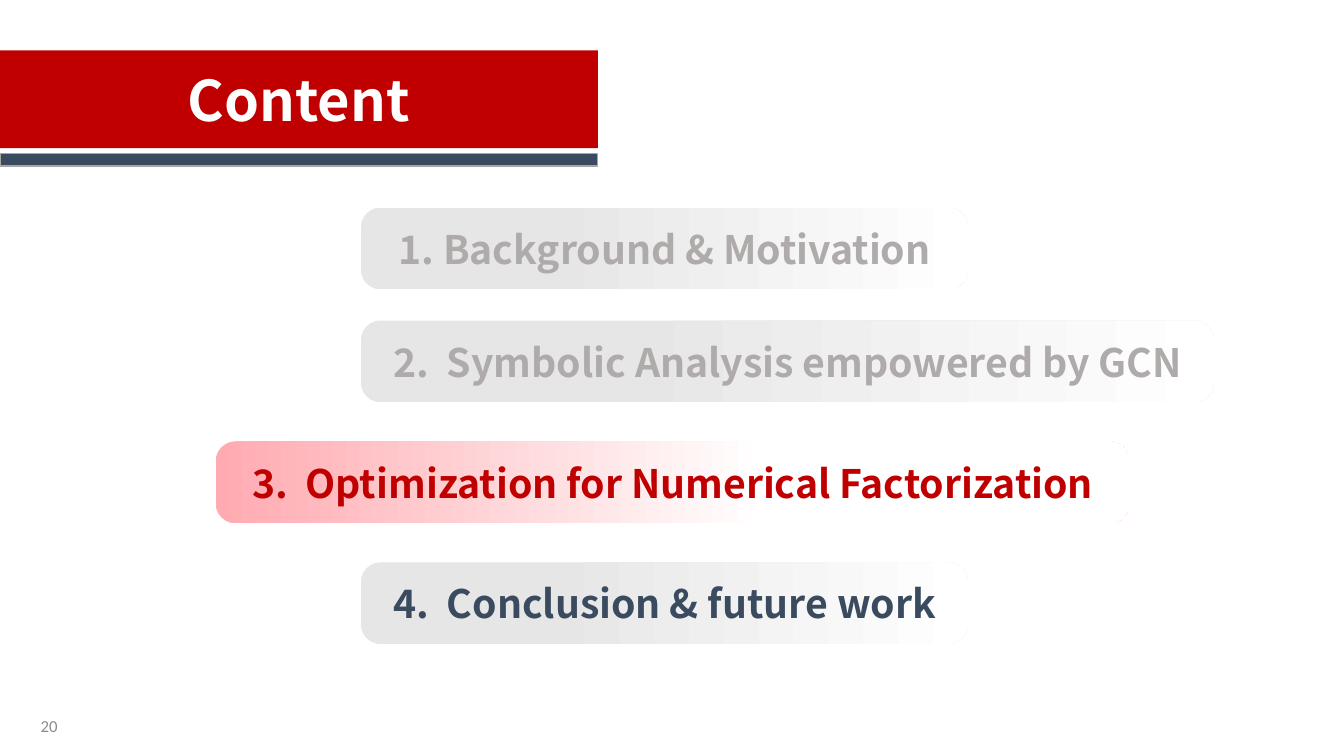
from dataclasses import dataclass

from pptx import Presentation
from pptx.dml.color import RGBColor
from pptx.enum.shapes import MSO_SHAPE
from pptx.enum.text import MSO_ANCHOR, MSO_AUTO_SIZE, PP_ALIGN
from pptx.util import Inches, Pt

RECTANGLE = MSO_SHAPE.RECTANGLE
ROUNDED = MSO_SHAPE.ROUNDED_RECTANGLE
MIDDLE = MSO_ANCHOR.MIDDLE
FIXED_SIZE = MSO_AUTO_SIZE.NONE
CENTER, RIGHT = PP_ALIGN.CENTER, PP_ALIGN.RIGHT

HEADING_FONT, NUMBER_FONT = "Noto Sans CJK SC", "Calibri"
RED, NAVY, WHITE = "C00000", "3A4B5F", "FFFFFF"
DIMMED, EDGE, NUMBER_GRAY = "AFABAB", "A6A6A6", "8C8C8C"
GRAY_FADE = (("E7E6E6", 0.31), (WHITE, 1))
PINK_FADE = (("FFABB1", 0), (WHITE, 0.6))

ENTRY_HEIGHT = 18.71
AGENDA = (
    ("1. Background & Motivation", 14.55, 0, 60.81, DIMMED, GRAY_FADE),
    ("2.  Symbolic Analysis empowered by GCN", 14.55, 25.87, 85.45, DIMMED, GRAY_FADE),
    ("3.  Optimization for Numerical Factorization", 0, 53.58, 91.52, RED, PINK_FADE),
    ("4.  Conclusion & future work", 14.55, 81.29, 60.81, NAVY, GRAY_FADE),
)


@dataclass
class Box:
    """A rectangle on the page, in slide units."""
    left: int
    top: int
    width: int
    height: int

    def inner(self, left, top, width, height):
        """Return the inner box given in percent of this one."""
        return Box(
            self.left + round(self.width * left / 100),
            self.top + round(self.height * top / 100),
            round(self.width * width / 100),
            round(self.height * height / 100),
        )

    def bounds(self):
        """Return left, top, width and height."""
        return self.left, self.top, self.width, self.height


def color(value):
    """Turn a hex string into a colour."""
    return RGBColor.from_string(value)


def write(shape, text, size, text_color, font=HEADING_FONT, bold=True, align=CENTER):
    """Write one vertically centred paragraph into a shape."""
    frame = shape.text_frame
    frame.text = text
    frame.word_wrap = True
    frame.auto_size = FIXED_SIZE
    frame.vertical_anchor = MIDDLE
    para = frame.paragraphs[0]
    para.alignment = align
    para.font.name = font
    para.font.size = Pt(size)
    para.font.bold = bold
    para.font.color.rgb = color(text_color)


def add_heading(page, box):
    """Place the title banner and the bar beneath it."""
    banner = page.shapes.title
    banner.left, banner.top, banner.width, banner.height = box.inner(0, 0, 100, 84.72).bounds()
    banner.fill.solid()
    banner.fill.fore_color.rgb = color(RED)
    write(banner, "Content", 40, WHITE)

    bar = page.shapes.add_shape(RECTANGLE, *box.inner(0, 89.52, 100, 10.48).bounds())
    bar.shadow.inherit = False
    bar.fill.solid()
    bar.fill.fore_color.rgb = color(NAVY)
    bar.line.color.rgb = color(EDGE)
    bar.line.width = Pt(1)


def add_entry(page, box, text, text_color, fade):
    """Place one agenda entry on a fading rounded panel."""
    panel = page.shapes.add_shape(ROUNDED, *box.bounds())
    panel.adjustments[0] = 0.24
    panel.shadow.inherit = False
    panel.line.fill.background()
    panel.fill.gradient()
    panel.fill.gradient_angle = 0
    for stop, (stop_color, position) in zip(panel.fill.gradient_stops, fade):
        stop.color.rgb = color(stop_color)
        stop.position = position
    write(panel, text, 28, text_color)


def add_agenda(page, box):
    """Place all agenda entries within the box."""
    for text, left, top, width, text_color, fade in AGENDA:
        add_entry(page, box.inner(left, top, width, ENTRY_HEIGHT), text, text_color, fade)


def add_page_number(page, box):
    """Place the page number."""
    number = page.shapes.add_textbox(*box.bounds())
    write(number, "20", 12, NUMBER_GRAY, NUMBER_FONT, False, RIGHT)


def main():
    """Build and save the deck."""
    deck = Presentation()
    deck.slide_width, deck.slide_height = Inches(13.33), Inches(7.5)
    page = deck.slides.add_slide(deck.slide_layouts.get_by_name("Title Only"))
    whole = Box(0, 0, deck.slide_width, deck.slide_height)
    add_heading(page, whole.inner(0, 6.67, 44.48, 15.27))
    add_agenda(page, whole.inner(16.05, 27.47, 74.27, 57.73))
    add_page_number(page, whole.inner(1.28, 93.33, 3.75, 5.33))
    deck.save("out.pptx")


if __name__ == "__main__":
    main()
